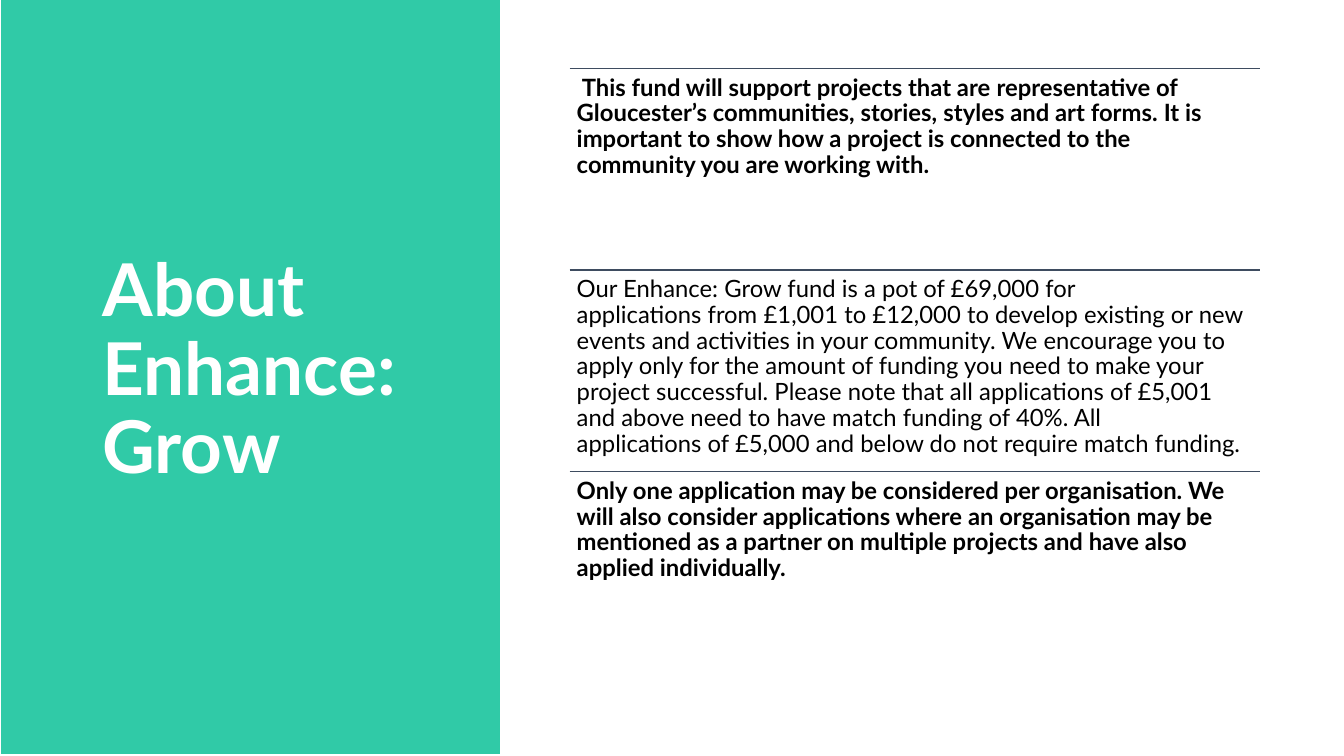
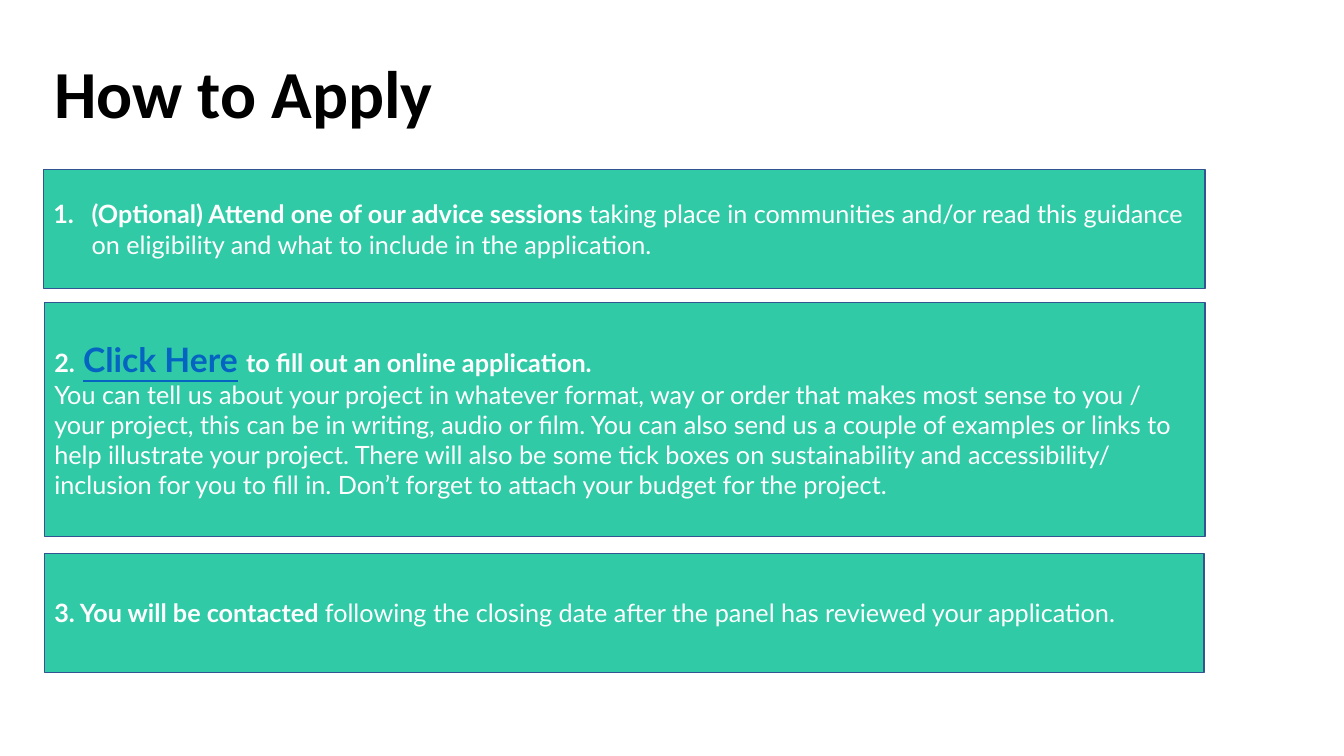
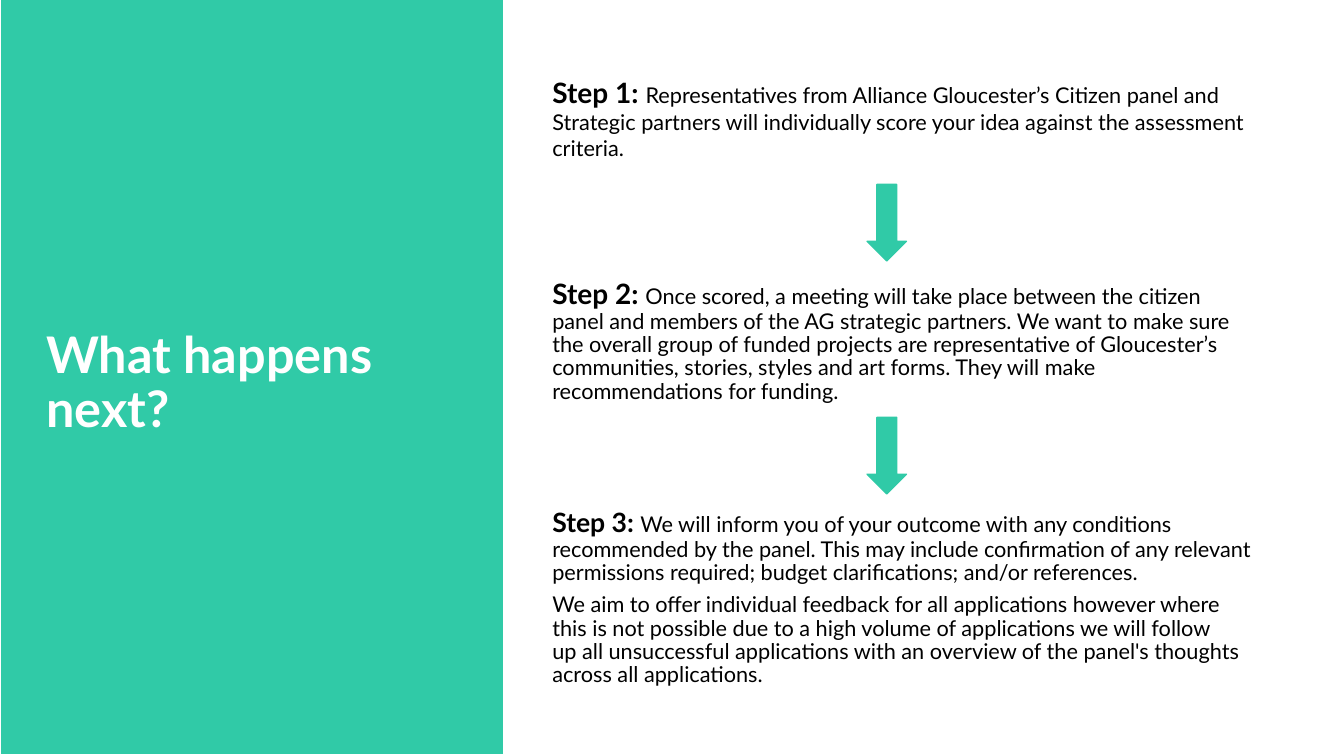
from typing import NamedTuple, Optional, Sequence

from lxml import etree
from pptx import Presentation
from pptx.dml.color import RGBColor
from pptx.enum.shapes import MSO_CONNECTOR, MSO_SHAPE
from pptx.enum.text import MSO_ANCHOR, PP_ALIGN
from pptx.oxml.ns import qn
from pptx.util import Inches, Pt

RECT = MSO_SHAPE.RECTANGLE
PROCESS = MSO_SHAPE.FLOWCHART_PROCESS
DOWN_ARROW = MSO_SHAPE.DOWN_ARROW
STRAIGHT = MSO_CONNECTOR.STRAIGHT
TOP, MIDDLE, BOTTOM = MSO_ANCHOR.TOP, MSO_ANCHOR.MIDDLE, MSO_ANCHOR.BOTTOM
LEFT = PP_ALIGN.LEFT

GREEN = RGBColor(0x30, 0xCA, 0xA7)
WHITE = RGBColor(0xFF, 0xFF, 0xFF)
BLACK = RGBColor(0x00, 0x00, 0x00)
RULE = RGBColor(0x3E, 0x4C, 0x60)
BOX_LINE = RGBColor(0x32, 0x54, 0x91)
LINK = RGBColor(0x05, 0x63, 0xC1)

SLIDE_W, SLIDE_H = 13.33, 7.5
FONT, TITLE_FONT = "Lato", "Calibri"
TIE, NO_BREAK_SPACE = "~", chr(160)  # a tie in the wording keeps two words together


class Box(NamedTuple):
    x: float
    y: float
    w: float
    h: float

    def emu(self) -> list:
        return [Inches(v) for v in self]


class Run(NamedTuple):
    text: str
    size: float
    bold: bool = False
    color: Optional[RGBColor] = None
    underline: bool = False


Paragraph = Sequence[Run]


class Step(NamedTuple):
    box: Box
    paragraphs: Sequence[Paragraph]
    spacing: Optional[float] = 0.9
    after: float = 6


class ApplyBox(NamedTuple):
    box: Box
    paragraphs: Sequence[Paragraph]
    numbered: bool = False


def write(sp, paragraphs: Sequence[Paragraph], *, color=BLACK, font=FONT,
          anchor=TOP, inset=(0.1, 0.05), spacing=None, after=0) -> None:
    """Fill a shape or text box with formatted paragraphs."""
    tf = sp.text_frame
    tf.word_wrap = True
    tf.vertical_anchor = anchor
    tf.margin_left = tf.margin_right = Inches(inset[0])
    tf.margin_top = tf.margin_bottom = Inches(inset[1])
    for i, runs in enumerate(paragraphs):
        p = tf.add_paragraph() if i else tf.paragraphs[0]
        p.alignment = LEFT
        p.space_after = Pt(after)
        if spacing:
            p.line_spacing = spacing
        for run in runs:
            r = p.add_run()
            r.text = run.text.replace(TIE, NO_BREAK_SPACE)
            r.font.name = font
            r.font.size = Pt(run.size)
            r.font.bold = run.bold
            r.font.underline = run.underline
            r.font.color.rgb = run.color or color


def add_text(slide, box: Box, paragraphs: Sequence[Paragraph], **fmt) -> None:
    write(slide.shapes.add_textbox(*box.emu()), paragraphs, **fmt)


def add_block(slide, kind, box: Box, line: RGBColor):
    """Add a green shape with a thin outline."""
    sp = slide.shapes.add_shape(kind, *box.emu())
    sp.shadow.inherit = False
    sp.fill.solid()
    sp.fill.fore_color.rgb = GREEN
    sp.line.color.rgb = line
    sp.line.width = Pt(1)
    return sp


def add_rule(slide, x: float, y: float, w: float) -> None:
    c = slide.shapes.add_connector(STRAIGHT, Inches(x), Inches(y), Inches(x + w), Inches(y))
    c.line.color.rgb = RULE
    c.line.width = Pt(1)
    etree.SubElement(c._element.spPr, qn("a:effectLst"))


def number_paragraph(p, indent: float) -> None:
    """Give a paragraph an automatic number with a hanging indent."""
    pPr = p._p.get_or_add_pPr()
    pPr.set("marL", str(Inches(indent)))
    pPr.set("indent", str(-Inches(indent)))
    etree.SubElement(pPr, qn("a:buFont"), typeface="+mj-lt")
    etree.SubElement(pPr, qn("a:buAutoNum"), type="arabicPeriod")


def add_title(slide, text: str, box: Box, size: float, **fmt) -> None:
    add_text(slide, box, [[Run(text, size, True)]], spacing=0.9, **fmt)


def add_side_panel(slide, width: float, title: str, box: Box, size: float, anchor) -> None:
    """Add the green left panel and its white title."""
    add_block(slide, RECT, Box(0, -0.01, width, SLIDE_H), WHITE)
    add_title(slide, title, box, size, color=WHITE, anchor=anchor)


FUND_FACTS = [
    Run(" This fund will support projects that are~representative of Gloucester’s communities, "
        "stories,~styles and art forms.~It is important to show how a project is connected to "
        "the community you are working with.", 17, True),
    Run("Our~Enhance: Grow~fund is a pot of £69,000 for applications~from £1,001 to £12,000 to "
        "develop existing or new events and activities in your community. We encourage you to "
        "apply only for the amount of funding you need to make your project successful. Please "
        "note that all applications of £5,001 and above~need to have match funding of 40%. All "
        "applications~of £5,000 and~below do not require match funding.", 17),
    Run("Only one application may be considered per organisation. We will also consider "
        "applications where an organisation may be mentioned as a partner on multiple projects "
        "and have also applied individually.", 17, True),
]

APPLY_BOXES = [
    ApplyBox(Box(0.43, 1.68, 11.52, 1.18), [[
        Run("(Optional) Attend one of our advice sessions ", 18, True),
        Run("taking place in communities and/or read this guidance on eligibility and what to "
            "include in the application.", 18)]], numbered=True),
    ApplyBox(Box(0.44, 3, 11.51, 2.32), [
        [Run("2.", 18, True), Run(" ", 24, True), Run("Click Here", 24, True, LINK, True),
         Run(" ", 24, True), Run("to fill out an online application.", 18, True)],
        [Run("You can tell us about your project in whatever format, way or order that makes "
             "most sense to you / your project, this can be in writing, audio or film. You can "
             "also send us a couple of examples or links to help illustrate your project. There "
             "will also be some tick boxes on sustainability and accessibility/ inclusion for "
             "you to fill in. Don’t forget to attach your budget for the project.", 18)]]),
    ApplyBox(Box(0.44, 5.49, 11.5, 1.18), [[
        Run("3. You will be contacted ", 18, True),
        Run("following~the closing date after the panel has reviewed your application.", 18)]]),
]

STEP_X = 5.38
STEPS = [
    Step(Box(STEP_X, 0.7, 7.31, 0.96), [[
        Run("Step 1:~", 20, True),
        Run("Representatives from Alliance Gloucester’s Citizen panel and Strategic~partners "
            "will individually score your idea against the assessment criteria.", 15.5)]],
        spacing=None, after=0),
    Step(Box(STEP_X, 2.73, 7.13, 1.41), [[
        Run("Step 2: ", 20, True),
        Run("Once scored, a meeting will take place between the citizen panel and members of "
            "the AG strategic partners.~We want to make sure the overall group of funded "
            "projects are representative of Gloucester’s communities, stories, styles and art "
            "forms. They will make recommendations for funding.", 15.5)]]),
    Step(Box(STEP_X, 5.01, 7.13, 2.01), [
        [Run("Step 3: ", 19, True),
         Run("We will inform you of your outcome with any conditions recommended by the panel. "
             "This may include confirmation of any relevant permissions required; budget "
             "clarifications; and/or references.", 15.5)],
        [Run("We aim to offer individual feedback for all applications however where this is "
             "not possible due to a high volume of applications we will follow up~all "
             "unsuccessful applications with an overview of the panel's thoughts across all "
             "applications.", 15.5)]]),
]
ARROW_TOPS = (1.83, 4.14)


def build_about(slide) -> None:
    add_side_panel(slide, 4.97, "About Enhance: Grow", Box(0.92, 0.61, 3.64, 6.15), 52, MIDDLE)
    x, top, w, row_h = 5.65, 0.68, 6.85, 2.0
    for i, fact in enumerate(FUND_FACTS):
        y = top + i * row_h
        add_rule(slide, x, y, w)
        add_text(slide, Box(x, y, w, row_h), [[fact]], inset=(0.07, 0.07), spacing=0.9)


def build_apply(slide) -> None:
    add_title(slide, "How to Apply", Box(0.44, 0.23, 11.5, 1.45), 48,
              font=TITLE_FONT, anchor=MIDDLE)
    for item in APPLY_BOXES:
        sp = add_block(slide, PROCESS, item.box, BOX_LINE)
        write(sp, item.paragraphs, color=WHITE, anchor=MIDDLE)
        if item.numbered:
            number_paragraph(sp.text_frame.paragraphs[0], 0.38)


def build_next(slide) -> None:
    add_side_panel(slide, 5, "What happens next?", Box(0.36, 3.3, 4.63, 1.1), 36, BOTTOM)
    for step in STEPS:
        add_text(slide, step.box, step.paragraphs, spacing=step.spacing, after=step.after)
    for y in ARROW_TOPS:
        add_block(slide, DOWN_ARROW, Box(8.6, y, 0.39, 0.76), GREEN)


def main() -> None:
    prs = Presentation()
    prs.slide_width, prs.slide_height = Inches(SLIDE_W), Inches(SLIDE_H)
    blank = prs.slide_layouts[6]
    for build in (build_about, build_apply, build_next):
        build(prs.slides.add_slide(blank))
    prs.save("out.pptx")


if __name__ == "__main__":
    main()
